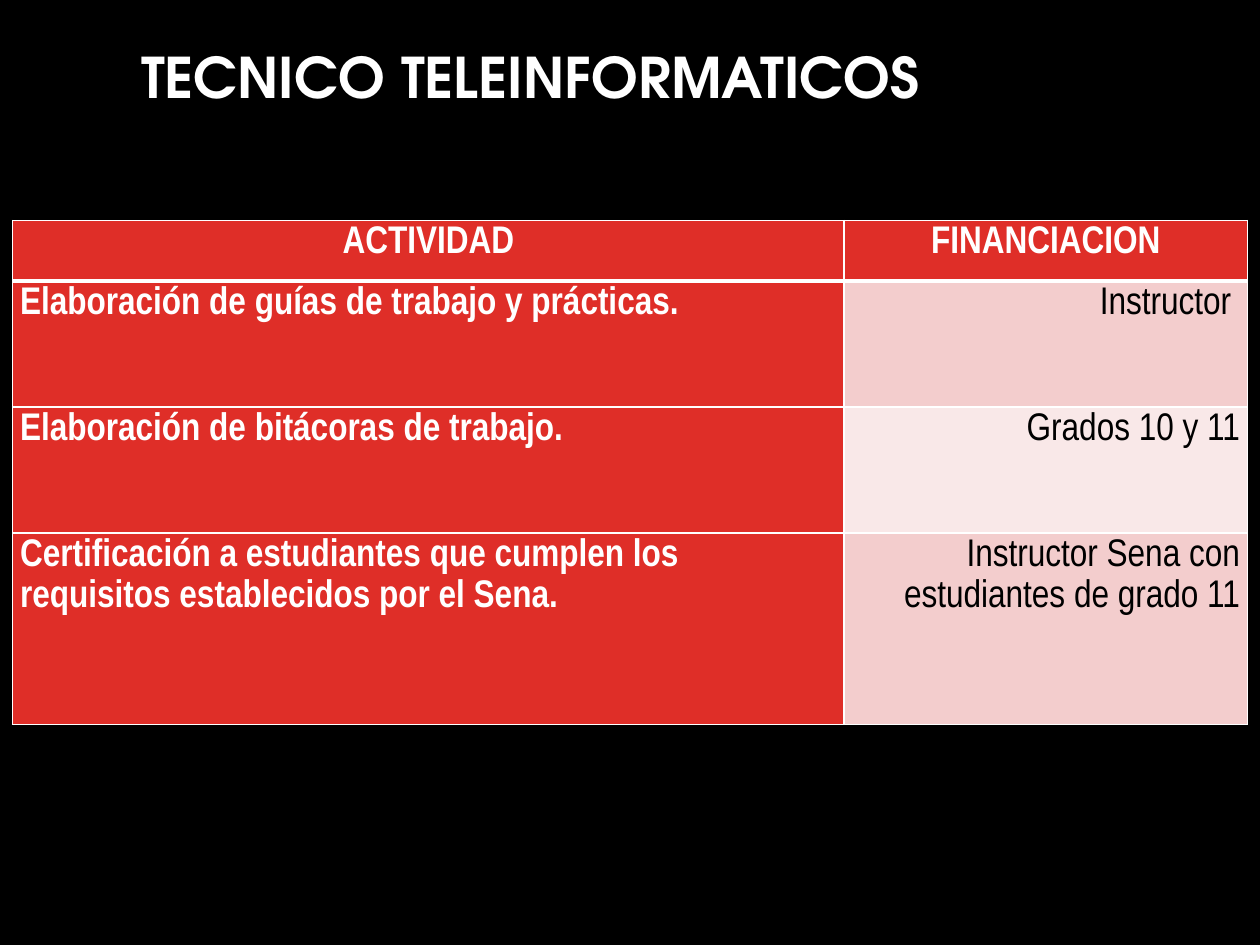
"""Build the slide with the table of activities and their funding."""
from lxml import etree
from pptx import Presentation
from pptx.dml.color import RGBColor
from pptx.enum.text import MSO_ANCHOR, MSO_AUTO_SIZE, PP_ALIGN
from pptx.oxml.ns import qn
from pptx.util import Inches, Pt

LEFT, MID, RIGHT = PP_ALIGN.LEFT, PP_ALIGN.CENTER, PP_ALIGN.RIGHT
TOP = MSO_ANCHOR.TOP
GROW = MSO_AUTO_SIZE.SHAPE_TO_FIT_TEXT
HUES = {"black": "000000", "white": "FFFFFF", "red": "DF2E28",
        "rose": "F3CDCD", "pale": "F9E8E8"}


def write(frame, text, font="Arial Narrow", size=22, hue="white", bold=True,
          align=LEFT, space=1.15):
    para = frame.paragraphs[0]
    para.alignment = align
    para.line_spacing = space
    run = para.add_run()
    run.text = text
    run.font.name = font
    run.font.size = Pt(size)
    run.font.bold = bold
    run.font.color.rgb = RGBColor.from_string(HUES[hue])


def edge(cell, side, width):
    props = cell._tc.get_or_add_tcPr()
    line = etree.Element(qn("a:" + side), w=str(Pt(width)))
    fill = etree.SubElement(line, qn("a:solidFill"))
    etree.SubElement(fill, qn("a:srgbClr"), val=HUES["white"])
    spot = len(props.findall(qn("a:lnL")) + props.findall(qn("a:lnR"))
               + props.findall(qn("a:lnT")))
    props.insert(spot, line)


deck = Presentation()
deck.slide_width, deck.slide_height = Inches(10), Inches(7.5)
slide = deck.slides.add_slide(deck.slide_layouts[5])
back = slide.background.fill
back.solid()
back.fore_color.rgb = RGBColor.from_string(HUES["black"])

title = slide.shapes.title
title.left, title.top = Inches(1.02), Inches(0.29)
title.width, title.height = Inches(7.95), Inches(0.64)
frame = title.text_frame
frame.word_wrap = True
frame.auto_size = GROW
frame.vertical_anchor = TOP
write(frame, "TECNICO TELEINFORMATICOS", font="TeX Gyre Adventor", size=32,
      space=1.0)

rows = [
    ("ACTIVIDAD", "FINANCIACION"),
    ("Elaboración de guías de trabajo y prácticas.", "Instructor "),
    ("Elaboración de bitácoras de trabajo.", "Grados 10 y 11"),
    ("Certificación a estudiantes que cumplen los requisitos establecidos "
     "por el Sena.", "Instructor Sena con estudiantes de grado 11"),
]
table = slide.shapes.add_table(4, 2, Inches(0.1), Inches(1.75), Inches(9.8),
                               Inches(4)).table
for col, width in zip(table.columns, (6.6, 3.2)):
    col.width = Inches(width)
for row, height in zip(table.rows, (0.48, 1, 1, 1.52)):
    row.height = Inches(height)

for i, row in enumerate(rows):
    for j, text in enumerate(row):
        cell = table.cell(i, j)
        head = i == 0
        data = j == 1 and not head
        tint = ("rose" if i % 2 else "pale") if data else "red"
        cell.fill.solid()
        cell.fill.fore_color.rgb = RGBColor.from_string(HUES[tint])
        cell.margin_left = cell.margin_right = Inches(0.06)
        cell.margin_top = cell.margin_bottom = 0
        cell.vertical_anchor = TOP
        write(cell.text_frame, text, hue="black" if data else "white",
              bold=not data, align=MID if head else RIGHT if data else LEFT)
        for side in ("lnL", "lnR", "lnT", "lnB"):
            thick = (i, side) in ((0, "lnB"), (1, "lnT"))
            edge(cell, side, 3 if thick else 1)

deck.save("out.pptx")
